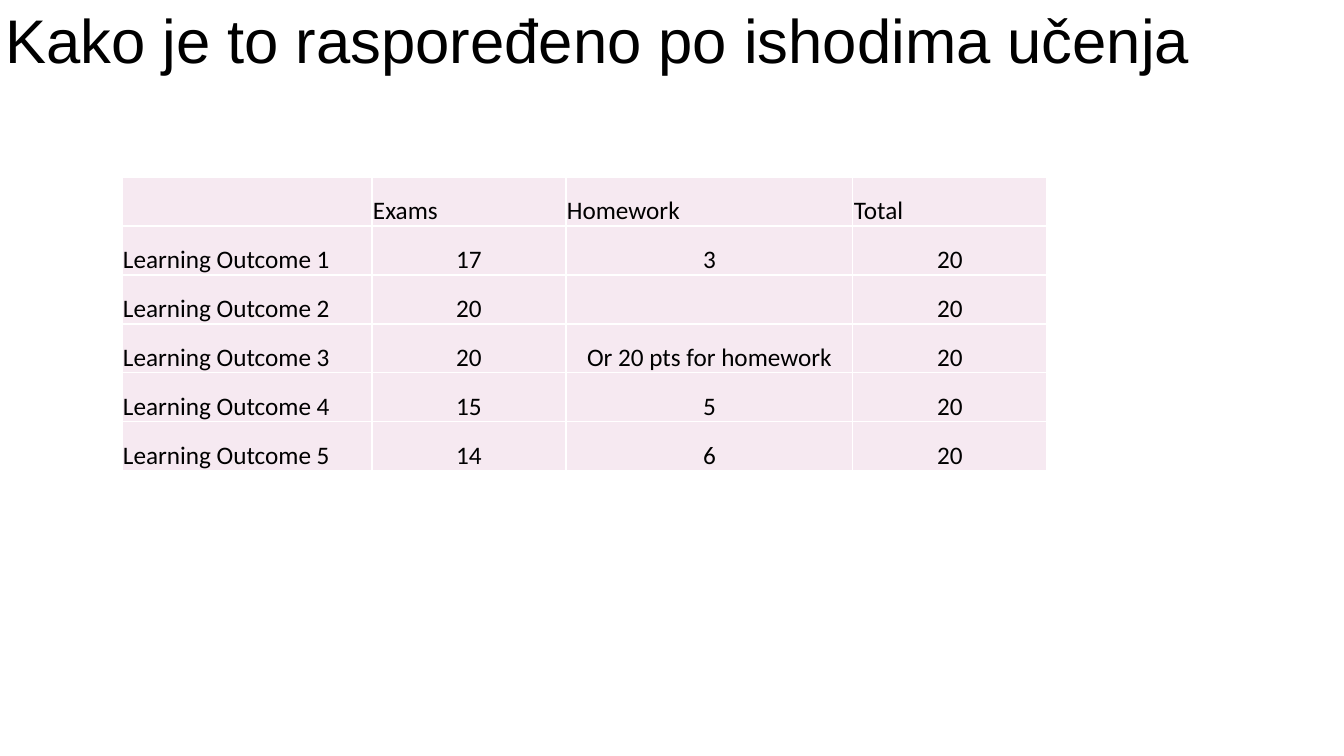
from dataclasses import dataclass

from lxml.etree import SubElement
from pptx import Presentation
from pptx.dml.color import RGBColor as RGB
from pptx.enum.text import MSO_ANCHOR as ANCHOR, MSO_AUTO_SIZE as AUTO_SIZE, PP_ALIGN as ALIGN
from pptx.oxml.ns import qn
from pptx.util import Emu, Pt

EMU_PER_PX = 914400 / 100.8


@dataclass(frozen=True)
class Theme:
    text: str = "000000"
    cell: str = "F6E9F1"
    border: str = "FFFFFF"
    title_font: str = "Arial"
    table_font: str = "Calibri"
    title_size: int = 44
    table_size: int = 18
    border_width: int = 1


THEME = Theme()
TITLE = "Kako je to raspoređeno po ishodima učenja"
COLUMN_WIDTHS = (250, 194, 287, 194)
ROW_HEIGHT = 49
POINTS = (
    ("", "Exams", "Homework", "Total"),
    ("Learning Outcome 1", "17", "3", "20"),
    ("Learning Outcome 2", "20", "", "20"),
    ("Learning Outcome 3", "20", "Or 20 pts for homework", "20"),
    ("Learning Outcome 4", "15", "5", "20"),
    ("Learning Outcome 5", "14", "6", "20"),
)


def px(length):
    return Emu(round(length * EMU_PER_PX))


def style_font(font, name, size):
    font.name = name
    font.size = Pt(size)
    font.color.rgb = RGB.from_string(THEME.text)


def set_title(page, text, left, top, width, height):
    title = page.shapes.title
    title.left, title.top, title.width, title.height = map(px, (left, top, width, height))
    frame = title.text_frame
    frame.text = text
    frame.word_wrap = True
    frame.auto_size = AUTO_SIZE.NONE
    frame.vertical_anchor = ANCHOR.MIDDLE
    para = frame.paragraphs[0]
    para.alignment = ALIGN.LEFT
    para.line_spacing = 0.9
    style_font(para.runs[0].font, THEME.title_font, THEME.title_size)


def set_borders(cell):
    properties = cell._tc.get_or_add_tcPr()
    for side in ("lnL", "lnR", "lnT", "lnB"):
        line = SubElement(properties, qn(f"a:{side}"), w=str(Pt(THEME.border_width)))
        fill = SubElement(line, qn("a:solidFill"))
        SubElement(fill, qn("a:srgbClr"), val=THEME.border)


def set_cell(cell, text, alignment):
    # Borders come before the fill in the cell properties
    set_borders(cell)
    cell.fill.solid()
    cell.fill.fore_color.rgb = RGB.from_string(THEME.cell)
    cell.vertical_anchor = ANCHOR.BOTTOM
    cell.margin_left = cell.margin_right = cell.margin_top = px(1)
    cell.margin_bottom = 0
    cell.text = text
    para = cell.text_frame.paragraphs[0]
    para.alignment = alignment
    style_font(para.font, THEME.table_font, THEME.table_size)
    for span in para.runs:
        style_font(span.font, THEME.table_font, THEME.table_size)


def add_points_table(page, rows, left, top):
    size = (sum(COLUMN_WIDTHS), ROW_HEIGHT * len(rows))
    table = page.shapes.add_table(
        len(rows), len(COLUMN_WIDTHS), *map(px, (left, top, *size))
    ).table
    table.first_row = table.horz_banding = False
    for column, width in zip(table.columns, COLUMN_WIDTHS):
        column.width = px(width)
    for row in table.rows:
        row.height = px(ROW_HEIGHT)
    # Headings and row names stand left, points are centred
    for row_index, values in enumerate(rows):
        for column_index, value in enumerate(values):
            is_points = row_index > 0 and column_index > 0
            set_cell(table.cell(row_index, column_index), value,
                     ALIGN.CENTER if is_points else ALIGN.LEFT)


def main():
    deck = Presentation()
    deck.slide_width, deck.slide_height = px(1344), px(756)
    page = deck.slides.add_slide(deck.slide_layouts[5])
    set_title(page, TITLE, -5, 0, 1350, 87)
    add_points_table(page, POINTS, 122, 177)
    deck.save("out.pptx")


if __name__ == "__main__":
    main()
